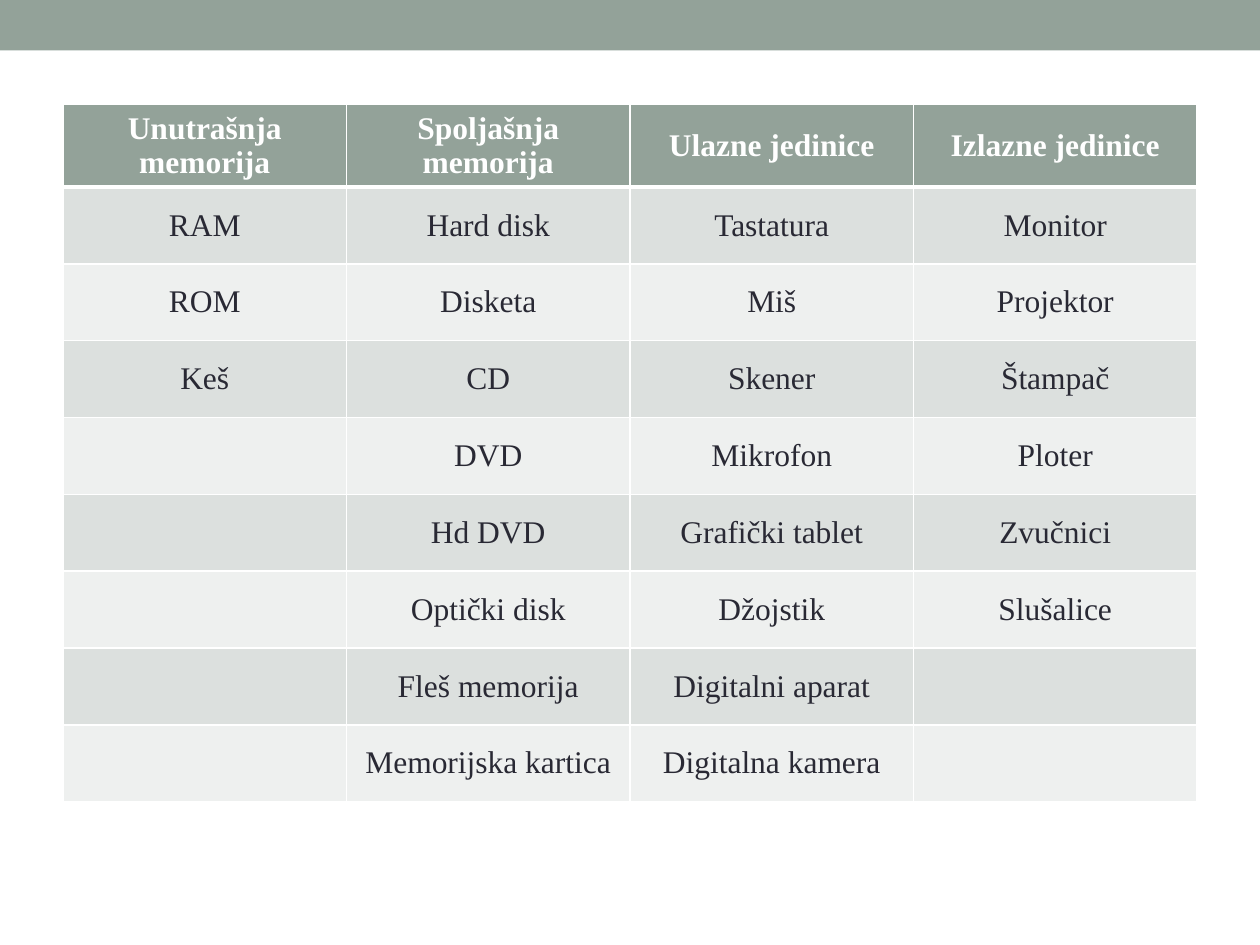
from dataclasses import dataclass
from itertools import zip_longest

from lxml import etree
from pptx import Presentation
from pptx import util as u
from pptx.dml.color import RGBColor
from pptx.enum import shapes, text
from pptx.oxml.ns import qn


@dataclass(frozen=True)
class Theme:
    accent: str = "93A299"
    bands: tuple = ("DCE0DE", "EEF0EF")
    ink: str = "292934"
    white: str = "FFFFFF"
    font: str = "Times New Roman"
    size: int = 18
    border: int = 1
    header_border: int = 3


DEVICES = {
    "Unutrašnja memorija": ["RAM", "ROM", "Keš"],
    "Spoljašnja memorija": ["Hard disk", "Disketa", "CD", "DVD", "Hd DVD", "Optički disk",
                            "Fleš memorija", "Memorijska kartica"],
    "Ulazne jedinice": ["Tastatura", "Miš", "Skener", "Mikrofon", "Grafički tablet",
                        "Džojstik", "Digitalni aparat", "Digitalna kamera"],
    "Izlazne jedinice": ["Monitor", "Projektor", "Štampač", "Ploter", "Zvučnici", "Slušalice"],
}


class SlideBuilder:
    def __init__(self, slide, theme):
        self.slide = slide
        self.theme = theme

    def paint(self, item, color):
        item.fill.solid()
        item.fill.fore_color.rgb = RGBColor.from_string(color)

    def bar(self, left, top, width, height):
        bar = self.slide.shapes.add_shape(
            shapes.MSO_SHAPE.RECTANGLE, *map(u.Inches, (left, top, width, height)))
        bar.shadow.inherit = False
        self.paint(bar, self.theme.accent)
        bar.line.fill.background()

    def borders(self, cell, top, bottom):
        properties = cell._tc.get_or_add_tcPr()
        sides = {"L": self.theme.border, "R": self.theme.border, "T": top, "B": bottom}
        for side, points in sides.items():
            line = etree.SubElement(properties, qn(f"a:ln{side}"), w=str(u.Pt(points)))
            fill = etree.SubElement(line, qn("a:solidFill"))
            etree.SubElement(fill, qn("a:srgbClr"), val=self.theme.white)

    def cell(self, cell, words, row):
        theme = self.theme
        header = row == 0
        self.borders(cell, theme.header_border if row == 1 else theme.border,
                     theme.header_border if header else theme.border)
        self.paint(cell, theme.accent if header else theme.bands[(row - 1) % 2])
        cell.vertical_anchor = text.MSO_ANCHOR.MIDDLE
        cell.text_frame.text = words
        para = cell.text_frame.paragraphs[0]
        para.alignment = text.PP_ALIGN.CENTER
        for span in para.runs:
            span.font.name = theme.font
            span.font.size = u.Pt(theme.size)
            span.font.bold = header
            span.font.color.rgb = RGBColor.from_string(theme.white if header else theme.ink)

    def table(self, columns, left, top, width, row_height):
        rows = [list(columns), *zip_longest(*columns.values(), fillvalue="")]
        frame = self.slide.shapes.add_table(
            len(rows), len(columns),
            *map(u.Inches, (left, top, width, row_height * len(rows))))
        table = frame.table
        for column in table.columns:
            column.width = u.Inches(width / len(columns))
        for number, row in enumerate(rows):
            table.rows[number].height = u.Inches(row_height)
            for position, words in enumerate(row):
                self.cell(table.cell(number, position), words, number)


def main():
    deck = Presentation()
    deck.slide_width, deck.slide_height = u.Inches(10), u.Inches(7.5)
    page = SlideBuilder(deck.slides.add_slide(deck.slide_layouts[6]), Theme())
    page.bar(0, 0, 10, 0.4)
    page.table(DEVICES, 0.5, 0.83, 9, 0.61)
    deck.save("out.pptx")


if __name__ == "__main__":
    main()
